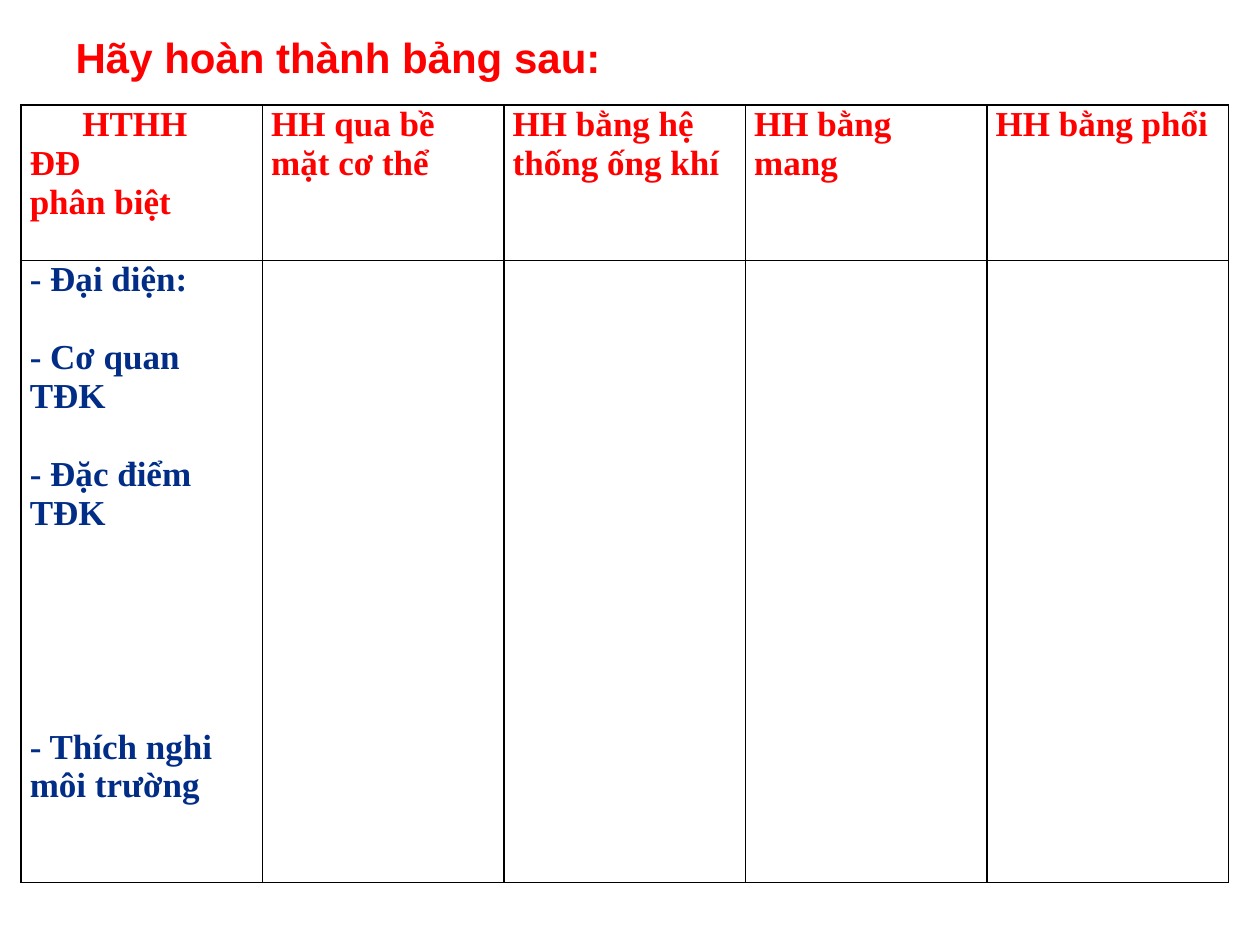
from lxml.etree import SubElement
from pptx import Presentation
from pptx.dml.color import RGBColor
from pptx.enum.text import MSO_ANCHOR, MSO_AUTO_SIZE, PP_ALIGN
from pptx.oxml.ns import qn
from pptx.util import Cm, Pt

RED = RGBColor(0xFF, 0x00, 0x00)
NAVY = RGBColor(0x01, 0x2D, 0x86)
BLACK = RGBColor(0x00, 0x00, 0x00)
WHITE = RGBColor(0xFF, 0xFF, 0xFF)
LINE = 22.3  # height of one line of table text, in points

# Each paragraph: text, blank lines before it, first-line indent in cm
HEADINGS = [
    [("HTHH", 0, 1.06), ("ĐĐ", 0, 0), ("phân biệt", 0, 0)],
    [("HH qua bề mặt cơ thể", 0, 0)],
    [("HH bằng hệ thống ống khí", 0, 0)],
    [("HH bằng mang", 0, 0)],
    [("HH bằng phổi", 0, 0)],
]
CRITERIA = [
    ("- Đại diện:", 0, 0),
    ("- Cơ quan TĐK", 1, 0),
    ("- Đặc điểm TĐK", 1, 0),
    ("- Thích nghi môi trường", 5, 0),
]


def write(para, text, *, font, size, color, before=0, indent=0):
    """Put formatted text into a paragraph."""
    para.alignment = PP_ALIGN.LEFT
    para.space_before = Pt(before)
    if indent:
        properties = para._p.get_or_add_pPr()
        properties.set("marL", "0")
        properties.set("indent", str(Cm(indent)))
    span = para.add_run()
    span.text = text
    span.font.name = font
    span.font.size = Pt(size)
    span.font.bold = True
    span.font.color.rgb = color


class Page:
    title_font = "Arial"
    table_font = "Times New Roman"

    def __init__(self, deck):
        self.slide = deck.slides.add_slide(deck.slide_layouts[5])

    def title(self, text, left, top, width, height):
        box = self.slide.shapes.title
        box.left, box.top, box.width, box.height = map(Cm, (left, top, width, height))
        frame = box.text_frame
        frame.word_wrap = True
        frame.auto_size = MSO_AUTO_SIZE.NONE
        frame.vertical_anchor = MSO_ANCHOR.TOP
        write(frame.paragraphs[0], text, font=self.title_font, size=24, color=RED)

    def table(self, left, top, width, heights, columns):
        frame = self.slide.shapes.add_table(
            len(heights), columns, Cm(left), Cm(top), Cm(width), Cm(sum(heights)))
        table = frame.table
        table.first_row = table.horz_banding = False
        for row, height in zip(table.rows, heights):
            row.height = Cm(height)
        for cell in table.iter_cells():
            cell.margin_left = cell.margin_right = Cm(0.18)
            cell.margin_top = cell.margin_bottom = 0
            self.borders(cell)
            cell.fill.solid()
            cell.fill.fore_color.rgb = WHITE
        return table

    def borders(self, cell):
        properties = cell._tc.get_or_add_tcPr()
        for side in ("lnL", "lnR", "lnT", "lnB"):
            line = SubElement(properties, qn(f"a:{side}"), w=str(Pt(1)))
            fill = SubElement(line, qn("a:solidFill"))
            SubElement(fill, qn("a:srgbClr"), val=str(BLACK))

    def fill_cell(self, cell, lines, color):
        frame = cell.text_frame
        for number, (text, blanks, indent) in enumerate(lines):
            para = frame.add_paragraph() if number else frame.paragraphs[0]
            write(para, text, font=self.table_font, size=20, color=color,
                  before=blanks * LINE, indent=indent)


def main():
    deck = Presentation()
    deck.slide_width, deck.slide_height = Cm(25.4), Cm(19.05)
    page = Page(deck)

    # Instruction above the table
    page.title("Hãy hoàn thành bảng sau:", 1.27, 0.51, 16.26, 1.27)

    # Table to complete: kinds of respiration across, criteria down
    table = page.table(0.42, 2.12, 24.34, (3.13, 12.54), len(HEADINGS))
    for column, lines in enumerate(HEADINGS):
        page.fill_cell(table.cell(0, column), lines, RED)
    page.fill_cell(table.cell(1, 0), CRITERIA, NAVY)

    deck.save("out.pptx")


if __name__ == "__main__":
    main()
